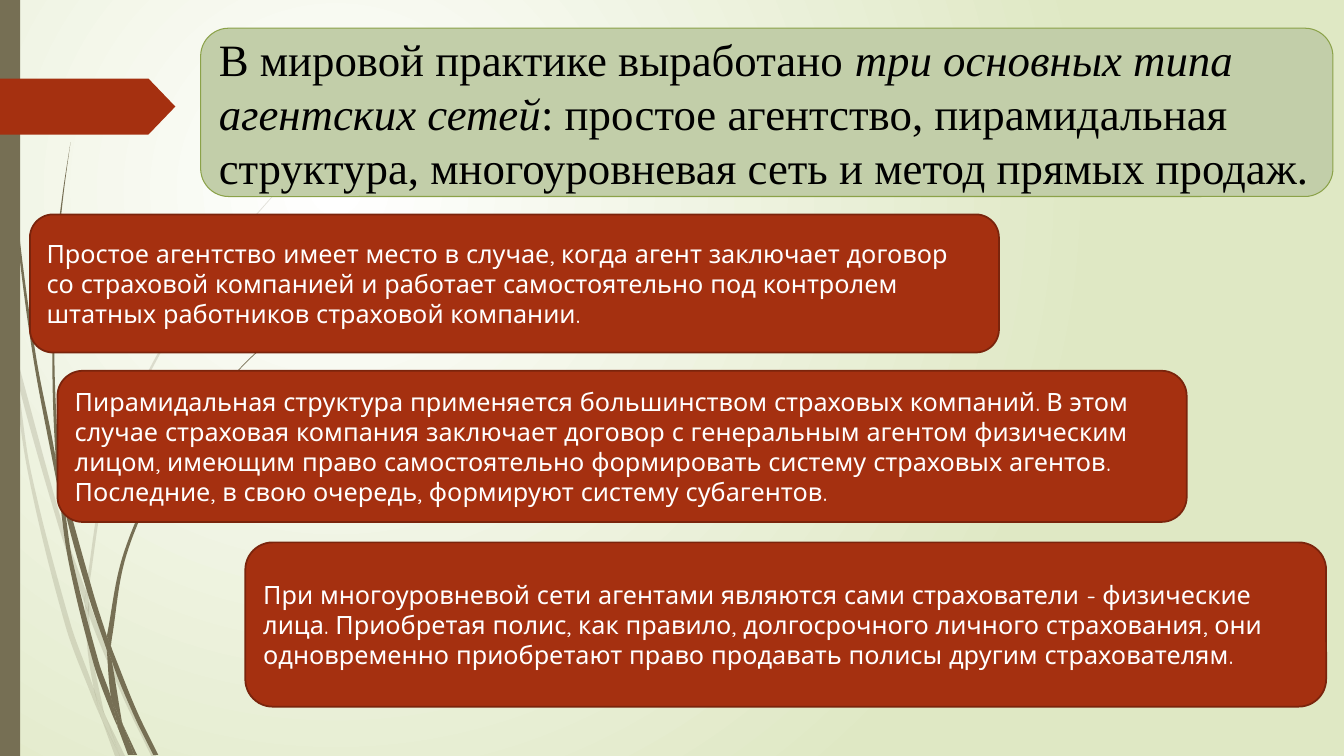
import pptx
import pptx.util
import pptx.dml.color
import pptx.enum.shapes
import pptx.enum.text
import pptx.oxml
import pptx.oxml.ns

W, H = 13.33, 7.5
OLIVE, RUST, WHITE, BLACK = "766F54", "A53010", "FFFFFF", "000000"
UNITS = 1000

TITLE_BOX = (14.93, 3.73, 84.25, 22.27)
TITLE = [
    ("В мировой практике выработано", False),
    (" три основных типа агентских сетей", True),
    (": простое агентство, пирамидальная структура, многоуровневая сеть и метод прямых продаж.", False),
]
CARDS = [
    ((2.23, 28.37, 72.1, 18.27),
     "Простое агентство имеет место в случае, когда агент заключает договор со страховой компанией "
     "и работает самостоятельно под контролем штатных работников страховой компании."),
    ((4.28, 49.05, 84.02, 20),
     "Пирамидальная структура применяется большинством страховых компаний. В этом случае страховая "
     "компания заключает договор с генеральным агентом физическим лицом, имеющим право самостоятельно "
     "формировать систему страховых агентов. Последние, в свою очередь, формируют систему субагентов."),
    ((18.25, 71.75, 80.42, 21.73),
     "При многоуровневой сети агентами являются сами страхователи - физические лица. Приобретая полис, "
     "как правило, долгосрочного личного страхования, они одновременно приобретают право продавать "
     "полисы другим страхователям."),
]
PALE_BLADES = [
    ([(0, 2.82), (0, 2.99), (.1, 3.44), (.11, 3.5)], [(0, 2.82), (.09, 3.22), (.11, 3.5)]),
    ([(.14, 3.45), (.17, 3.76), (.58, 5.22), (.84, 5.99)], [(.14, 3.45), (.62, 5.2), (.85, 5.86)]),
    ([(.88, 5.96), (.88, 6.1), (1.23, 6.94), (1.5, 7.5)],
     [(.88, 5.96), (.92, 6.07), (1.27, 6.92), (1.55, 7.5)]),
    ([(1.05, 7.11), (1.19, 7.5)], [(1.05, 7.11), (1.24, 7.5)]),
    ([(.11, 3.5), (.28, 4.7), (.65, 6.21), (.92, 6.93), (1.01, 7.14)],
     [(.11, 3.5), (.17, 3.76), (.31, 4.69), (.7, 6.19), (.93, 6.83), (.99, 7.07), (1.01, 7.14)]),
    ([(.84, 5.99), (.87, 6.46), (.93, 6.83), (.96, 6.92), (1.05, 7.11)],
     [(.84, 5.99), (.88, 6.08), (.91, 6.46), (1.03, 7.06), (1.05, 7.11)]),
    ([(3.12, 1.53), (2.89, 1.75), (2.68, 1.97), (2.28, 2.44), (1.58, 3.48), (1.07, 4.61),
      (.85, 5.84), (.85, 5.86)],
     [(3.12, 1.54), (2.9, 1.75), (2.68, 1.98), (2.29, 2.45), (1.6, 3.49), (1.1, 4.62),
      (.88, 5.84), (.88, 5.96)]),
    ([(1.01, 7.14), (1.14, 7.5)], [(1.01, 7.14), (1.19, 7.5)]),
    ([(.85, 5.86), (.84, 5.99), (.88, 6.08)], [(.85, 5.86), (.88, 5.96), (.88, 6.1)]),
    ([(.93, 6.83), (.99, 7.07), (1.01, 7.14), (1.19, 7.5)],
     [(.93, 6.83), (.96, 6.92), (1.05, 7.11), (1.19, 7.5)]),
]
DARK_BLADES = [
    ([(.03, 0), (.04, .48), (.07, 1.1), (.17, 2.33), (.33, 3.55), (.56, 4.77), (.57, 4.81)],
     [(.04, 0), (.05, .48), (.08, 1.09), (.19, 2.32), (.36, 3.55), (.55, 4.53), (.57, 4.81)]),
    ([(.6, 4.72), (.64, 5.05), (.88, 5.92), (1.06, 6.45)], [(.6, 4.72), (.93, 5.9), (1.06, 6.31)]),
    ([(1.1, 6.41), (1.11, 6.56), (1.32, 7.08), (1.52, 7.49)],
     [(1.1, 6.41), (1.13, 6.49), (1.36, 7.06), (1.57, 7.49)]),
    ([(.57, 4.77), (.68, 5.57), (.93, 6.59), (1.11, 7.08), (1.17, 7.22)],
     [(.57, 4.77), (.64, 5.05), (.72, 5.56), (.98, 6.57), (1.1, 6.91), (1.16, 7.17), (1.17, 7.22)]),
    ([(.7, 1.41), (.62, 1.93), (.56, 2.45), (.52, 3.49), (.55, 4.49), (.6, 4.72)],
     [(.7, 1.41), (.63, 1.93), (.58, 2.45), (.54, 3.49), (.58, 4.53), (.6, 4.72)]),
    ([(1.22, 7.19), (1.33, 7.49)], [(1.22, 7.19), (1.36, 7.49)]),
    ([(.55, 4.49), (.55, 4.53), (.57, 4.77), (.64, 5.05)], [(.55, 4.49), (.6, 4.72), (.64, 5.05)]),
    ([(2.6, 3.44), (2.45, 3.58), (2.31, 3.73), (2.04, 4.05), (1.56, 4.74), (1.22, 5.51), (1.06, 6.31)],
     [(2.61, 3.44), (2.45, 3.59), (2.31, 3.74), (2.05, 4.06), (1.58, 4.76), (1.25, 5.52),
      (1.11, 6.33), (1.1, 6.41)]),
    ([(1.17, 7.22), (1.27, 7.49)], [(1.17, 7.22), (1.31, 7.49)]),
    ([(1.06, 6.45), (1.1, 6.91), (1.16, 7.06), (1.22, 7.19)],
     [(1.06, 6.45), (1.09, 6.51), (1.11, 6.56), (1.21, 7.16), (1.22, 7.19)]),
    ([(1.06, 6.31), (1.06, 6.45), (1.09, 6.51), (1.11, 6.56)],
     [(1.06, 6.31), (1.1, 6.41), (1.11, 6.56)]),
    ([(1.1, 6.91), (1.16, 7.17), (1.17, 7.22), (1.3, 7.49)],
     [(1.1, 6.91), (1.16, 7.06), (1.22, 7.19), (1.33, 7.49)]),
]


def rgb(color):
    return pptx.dml.color.RGBColor.from_string(color)


def xml(tag, body=""):
    return pptx.oxml.parse_xml(f"<a:{tag} {pptx.oxml.ns.nsdecls('a')}>{body}</a:{tag.split()[0]}>")


def paint(sp, fill, line=None, width=0, alpha=None):
    sp.shadow.inherit = False
    sp.fill.solid()
    sp.fill.fore_color.rgb = rgb(fill)
    if alpha:
        color = sp.element.spPr.find(".//" + pptx.oxml.ns.qn("a:srgbClr"))
        color.append(xml(f'alpha val="{alpha * 1000}"'))
    if line:
        sp.line.color.rgb = rgb(line)
        sp.line.width = pptx.util.Pt(width)
    else:
        sp.line.fill.background()


def add_preset(shapes, kind, box, *look):
    sp = shapes.add_shape(kind, *[pptx.util.Inches(v * side / 100) for v, side in zip(box, (W, H, W, H))])
    paint(sp, *look)
    return sp


def write(sp, runs, size, font, color):
    tf = sp.text_frame
    for name, value in {"word_wrap": True, "vertical_anchor": pptx.enum.text.MSO_ANCHOR.MIDDLE}.items():
        setattr(tf, name, value)
    p = tf.paragraphs[0]
    p.alignment = pptx.enum.text.PP_ALIGN.LEFT
    for text, italic in runs:
        r = p.add_run()
        r.text = text
        for name, value in {"size": pptx.util.Pt(size), "name": font, "italic": italic}.items():
            setattr(r.font, name, value)
        r.font.color.rgb = rgb(color)


def curve(knots):
    last = len(knots) - 1
    slopes = []
    for i in range(last + 1):
        (x0, y0), (x1, y1) = knots[max(i - 1, 0)], knots[min(i + 1, last)]
        slopes.append((x1 - x0) / (y1 - y0))
    points = [knots[0]]
    for i in range(last):
        (x0, y0), (x1, y1) = knots[i], knots[i + 1]
        third = (y1 - y0) / 3
        points += [(x0 + third * slopes[i], y0 + third),
                   (x1 - third * slopes[i + 1], y1 - third), (x1, y1)]
    return points


def bend(lines):
    for i in range(0, len(lines), 3):
        bezier = xml("cubicBezTo")
        lines[i].addprevious(bezier)
        for line in lines[i:i + 3]:
            bezier.append(line[0])
            line.getparent().remove(line)


def add_blade(shapes, left, right, alpha=None):
    down, up = curve(left), curve(right)[::-1]
    outline = [(round(x * UNITS), round(y * UNITS)) for x, y in down + up]
    builder = shapes.build_freeform(*outline[0], scale=pptx.util.Inches(1) / UNITS)
    builder.add_line_segments(outline[1:], close=True)
    sp = builder.convert_to_shape()
    lines = sp.element.findall(".//" + pptx.oxml.ns.qn("a:lnTo"))
    bend(lines[:len(down) - 1])
    bend(lines[len(down):])
    paint(sp, OLIVE, alpha=alpha)


def set_background(slide):
    fill = slide.background.fill
    fill.gradient()
    for stop, color in zip(fill.gradient_stops, (WHITE, "DFE8C4")):
        stop.color.rgb = rgb(color)
    lin = slide.element.find(".//" + pptx.oxml.ns.qn("a:lin"))
    lin.getparent().replace(lin, xml(
        'path path="circle"', '<a:fillToRect l="50000" t="50000" r="100000" b="100000"/>'))


def main():
    prs = pptx.Presentation()
    prs.slide_width, prs.slide_height = pptx.util.Inches(W), pptx.util.Inches(H)
    slide = prs.slides.add_slide(prs.slide_layouts[6])
    shapes = slide.shapes
    kinds = pptx.enum.shapes.MSO_SHAPE
    set_background(slide)
    for blades, alpha in ((PALE_BLADES, 20), (DARK_BLADES, None)):
        for left, right in blades:
            add_blade(shapes, left, right, alpha)
    add_preset(shapes, kinds.RECTANGLE, (0, 0, 1.5, 100), OLIVE)
    arrow = add_preset(shapes, kinds.PENTAGON, (0, 10.4, 13.05, 7.4), RUST)
    arrow.adjustments[0] = 0.48
    title = add_preset(shapes, kinds.ROUNDED_RECTANGLE, TITLE_BOX, "C2CEA9", "8BA249", 0.75)
    write(title, TITLE, 32, "Times New Roman", BLACK)
    for box, text in CARDS:
        card = add_preset(shapes, kinds.ROUNDED_RECTANGLE, box, RUST, "7A240C", 1.25)
        write(card, [(text, False)], 18, "Quicksand", WHITE)
    prs.save("out.pptx")


if __name__ == "__main__":
    main()
